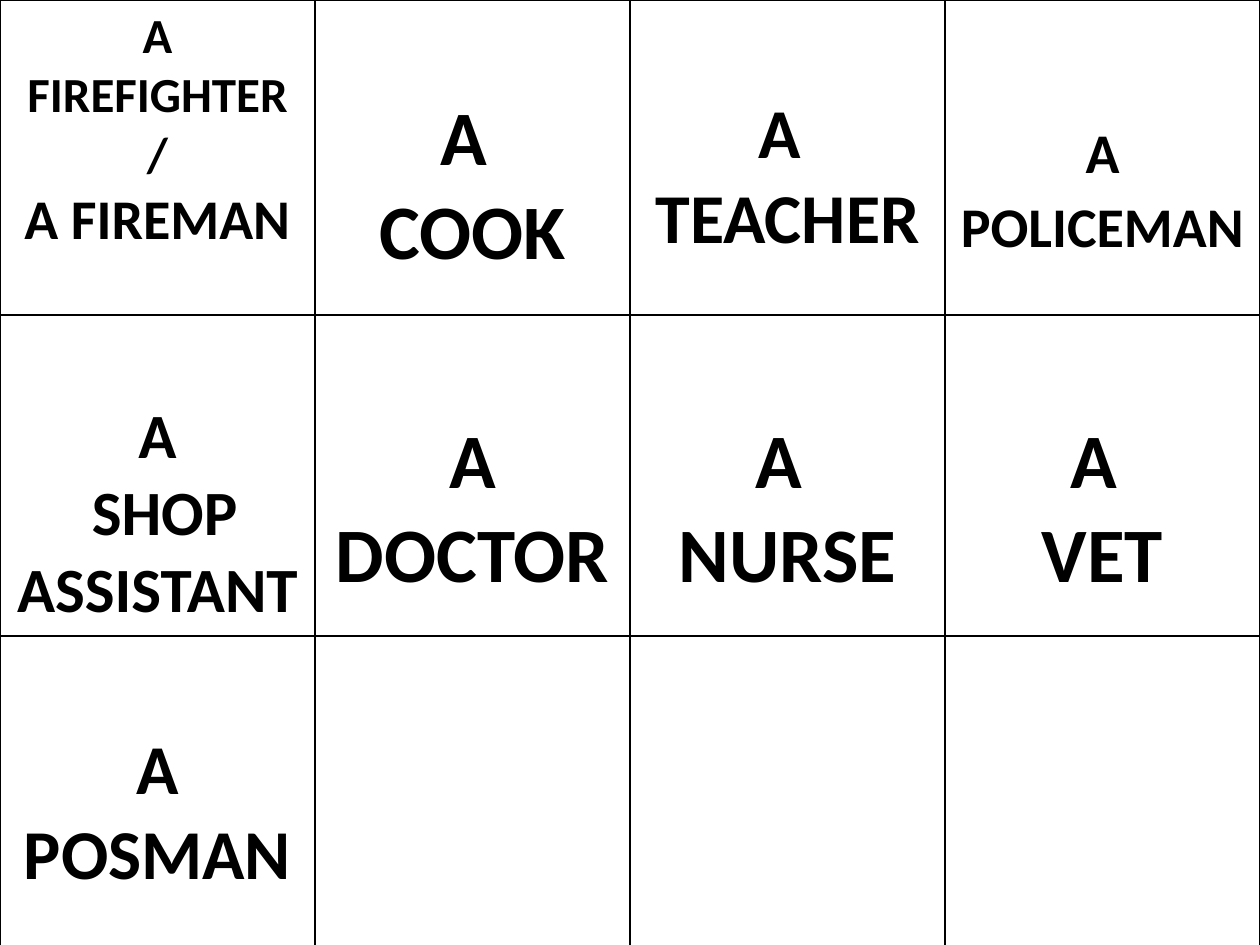
import lxml.etree
import pptx
import pptx.dml.color
import pptx.enum.text
import pptx.oxml.ns
import pptx.util

BLACK = pptx.dml.color.RGBColor(0x00, 0x00, 0x00)
FONT = "Calibri"
LINE_FACTOR = 1.22  # height of a Calibri line relative to its size
SLIDE_WIDTH = pptx.util.Cm(25.4)
SLIDE_HEIGHT = pptx.util.Cm(19.05)

# Each card: points of lead space size, then paragraphs made of (text, size) runs.
CARDS = [
    [
        (0, [[("A FIREFIGHTER", 28)], [(" / ", 28)], [("A FIREMAN", 32)]]),
        (40, [[("A ", 44)], [("COOK", 44)]]),
        (40, [[("A ", 40)], [("TEACHER", 40)]]),
        (44, [[("A", 32), (" ", 44), ("POLICEMAN", 32)]]),
    ],
    [
        (36, [[("A", 36)], [(" SHOP", 36)], [("ASSISTANT", 36)]]),
        (44, [[("A", 44)], [("DOCTOR", 44)]]),
        (44, [[("A ", 44)], [("NURSE", 44)]]),
        (44, [[("A ", 44)], [("VET", 44)]]),
    ],
    [(40, [[("A POSMAN", 40)]]), None, None, None],
]


def add_borders(cell):
    properties = cell._tc.get_or_add_tcPr()
    for position, side in enumerate(("lnL", "lnR", "lnT", "lnB")):
        line = lxml.etree.Element(
            pptx.oxml.ns.qn(f"a:{side}"), w=str(pptx.util.Pt(1))
        )
        fill = lxml.etree.SubElement(line, pptx.oxml.ns.qn("a:solidFill"))
        lxml.etree.SubElement(fill, pptx.oxml.ns.qn("a:srgbClr"), val=str(BLACK))
        properties.insert(position, line)


def fill_card(cell, lead_size, paragraphs):
    """Write a job title, lowered by one line of lead_size points."""
    cell.margin_top = pptx.util.Cm(0.13) + pptx.util.Pt(lead_size * LINE_FACTOR)
    text_frame = cell.text_frame
    for index, runs in enumerate(paragraphs):
        paragraph = text_frame.add_paragraph() if index else text_frame.paragraphs[0]
        paragraph.alignment = pptx.enum.text.PP_ALIGN.CENTER
        for text, size in runs:
            run = paragraph.add_run()
            run.text = text
            run.font.name = FONT
            run.font.size = pptx.util.Pt(size)
            run.font.bold = True
            run.font.color.rgb = BLACK


def add_card_grid(slide, left, top, width, height):
    table = slide.shapes.add_table(
        len(CARDS), len(CARDS[0]), left, top, width, height
    ).table
    table.first_row = False
    table.horz_banding = False
    for row_index, row in enumerate(CARDS):
        for column_index, card in enumerate(row):
            cell = table.cell(row_index, column_index)
            cell.fill.background()
            add_borders(cell)
            if card:
                fill_card(cell, *card)


def main():
    presentation = pptx.Presentation()
    presentation.slide_width = SLIDE_WIDTH
    presentation.slide_height = SLIDE_HEIGHT
    slide = presentation.slides.add_slide(presentation.slide_layouts[6])
    add_card_grid(slide, 0, 0, SLIDE_WIDTH, SLIDE_HEIGHT)
    presentation.save("out.pptx")


if __name__ == "__main__":
    main()
